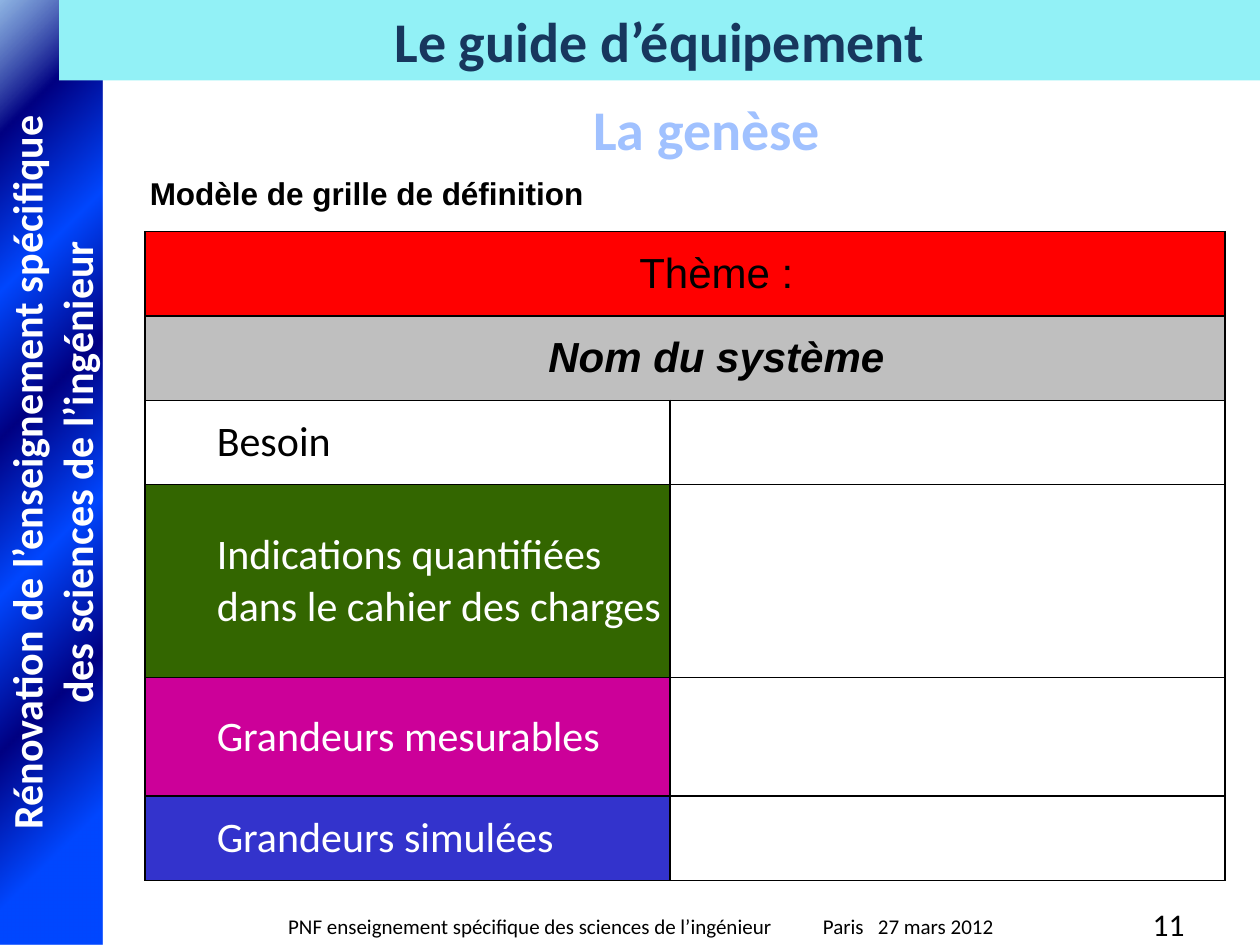
from lxml import etree
from pptx import Presentation
from pptx import util as u
from pptx.dml.color import RGBColor
from pptx.enum import shapes, text
from pptx.oxml import parse_xml

NS = "http://schemas.openxmlformats.org/drawingml/2006/main"
CENTER, RIGHT = text.PP_ALIGN.CENTER, text.PP_ALIGN.RIGHT
SIDEBAR_STOPS = [(13, "0047FF", 100), (28, "000082", 100), (43, "0047FF", 100),
                 (58, "000082", 100), (72, "0047FF", 100), (87, "000082", 100),
                 (100, "558ED5", 65), (100, "0047FF", 100)]
ROWS = [
    ("Thème :", "FF0000", 1.7),
    ("Nom du système", "BFBFBF", 1.7),
    ("Besoin", "FFFFFF", 1.7),
    ("Indications quantifiées dans le cahier des charges", "336600", 3.89),
    ("Grandeurs mesurables", "CC0099", 2.39),
    ("Grandeurs simulées", "3333CC", 1.7),
]


def rgb(value):
    return RGBColor.from_string(value)


def paint(target, color):
    target.fill.solid()
    target.fill.fore_color.rgb = rgb(color)


class Deck:
    """Holds the house style and the slide being built."""

    def __init__(self, prs):
        self.font = "Calibri"
        self.s = prs.slides.add_slide(prs.slide_layouts[5])

    def place(self, sp, box):
        sp.left, sp.top, sp.width, sp.height = [u.Cm(v) for v in box]

    def set_text(self, p, words, size, color="000000", bold=False, italic=False,
                 font=None, align=None):
        p.text = words
        p.alignment = align
        f = p.font
        f.name, f.size, f.bold, f.italic = font or self.font, u.Pt(size), bold, italic
        f.color.rgb = rgb(color)

    def title(self, words, box):
        sp = self.s.shapes.title
        self.place(sp, box)
        paint(sp, "92F1F6")
        sp.text_frame.auto_size = text.MSO_AUTO_SIZE.NONE
        sp.text_frame.vertical_anchor = text.MSO_ANCHOR.MIDDLE
        self.set_text(sp.text_frame.paragraphs[0], words, 32, "17375E", True, align=CENTER)

    def sidebar(self, lines, box):
        sp = self.s.shapes.add_shape(shapes.MSO_SHAPE.RECTANGLE, 0, 0, 0, 0)
        self.place(sp, box)
        sp.shadow.inherit = False
        sp.line.fill.background()
        stops = "".join(
            f'<a:gs pos="{pos * 1000}"><a:srgbClr val="{color}">'
            f'<a:alpha val="{alpha * 1000}"/></a:srgbClr></a:gs>'
            for pos, color, alpha in SIDEBAR_STOPS)
        fill = parse_xml(
            f'<a:gradFill xmlns:a="{NS}"><a:gsLst>{stops}</a:gsLst><a:path path="circle">'
            '<a:fillToRect l="100000" t="100000"/></a:path></a:gradFill>')
        sp._element.spPr.find(f"{{{NS}}}prstGeom").addnext(fill)
        tf = sp.text_frame
        tf.margin_left = tf.margin_right = tf.margin_top = tf.margin_bottom = 0
        tf.vertical_anchor = text.MSO_ANCHOR.MIDDLE
        tf._txBody.bodyPr.set("vert", "vert270")
        for i, line in enumerate(lines):
            p = tf.add_paragraph() if i else tf.paragraphs[0]
            self.set_text(p, line, 24, "FFFFFF", True, align=CENTER)
        self.s.shapes._spTree.insert(2, sp._element)

    def label(self, words, box, size, wrap=True, tabs=(), **style):
        sp = self.s.shapes.add_textbox(0, 0, 0, 0)
        self.place(sp, box)
        sp.text_frame.word_wrap = wrap
        p = sp.text_frame.paragraphs[0]
        self.set_text(p, words, size, **style)
        if tabs:
            stops = etree.Element(f"{{{NS}}}tabLst")
            p._p.get_or_add_pPr().insert(0, stops)
            for pos in tabs:
                etree.SubElement(stops, f"{{{NS}}}tab", pos=str(u.Cm(pos)), algn="l")

    def border(self, cell):
        tcPr = cell._tc.get_or_add_tcPr()
        for i, side in enumerate(("lnL", "lnR", "lnT", "lnB")):
            tcPr.insert(i, parse_xml(
                f'<a:{side} xmlns:a="{NS}" w="12700"><a:solidFill>'
                f'<a:srgbClr val="000000"/></a:solidFill></a:{side}>'))

    def grid(self, rows, left, top, widths):
        height = sum(row[2] for row in rows)
        box = [u.Cm(v) for v in (left, top, sum(widths), height)]
        table = self.s.shapes.add_table(len(rows), len(widths), *box).table
        table.first_row = table.horz_banding = False
        for column, width in zip(table.columns, widths):
            column.width = u.Cm(width)
        for i, (words, color, row_height) in enumerate(rows):
            table.rows[i].height = u.Cm(row_height)
            header = i < 2
            first, second = table.cell(i, 0), table.cell(i, 1)
            for cell, fill in ((first, color), (second, color if header else "FFFFFF")):
                paint(cell, fill)
                self.border(cell)
            if header:
                first.merge(second)
            first.margin_left = first.margin_right = u.Cm(0.18)
            first.margin_top = first.margin_bottom = 0
            first.vertical_anchor = text.MSO_ANCHOR.MIDDLE
            p = first.text_frame.paragraphs[0]
            self.set_text(p, words, 24, "000000" if i < 3 else "FFFFFF", i == 1, i == 1,
                          "Arial" if header else None, CENTER if header else None)
            p._p.get_or_add_pPr().set("marL", str(u.Cm(1.27)))


def main():
    prs = Presentation()
    prs.slide_width, prs.slide_height = u.Cm(25.4), u.Cm(19.05)
    deck = Deck(prs)
    deck.sidebar(["Rénovation de l’enseignement spécifique",
                  "des sciences de l’ingénieur"], (0, 0, 2.06, 19.05))
    deck.title("Le guide d’équipement", (1.19, 0, 24.21, 1.62))
    deck.label("PNF enseignement spécifique des sciences de l’ingénieur\tParis\t27 mars 2012",
               (5.56, 18.29, 17.07, 0.76), 12, tabs=(10.78, 11.89))
    deck.label("La genèse", (11.71, 1.78, 5.13, 1.62), 32, wrap=False,
               color="A0C1FF", bold=True)
    deck.label("Modèle de grille de définition", (2.77, 3.38, 19.84, 1.03), 18,
               bold=True, font="Arial")
    deck.grid(ROWS, 2.92, 4.67, (10.59, 11.18))
    deck.label("11", (18.21, 18.11, 5.92, 1.02), 18, align=RIGHT)
    prs.save("out.pptx")


if __name__ == "__main__":
    main()
